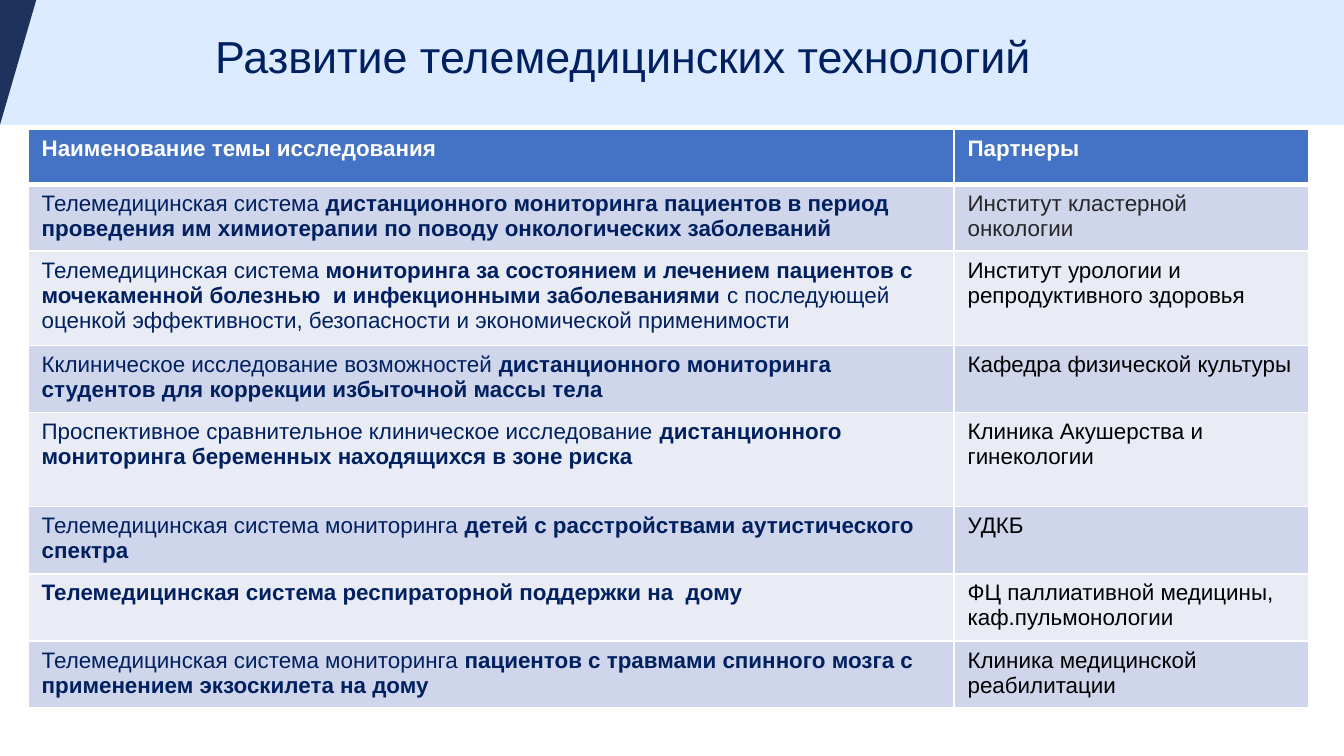
from lxml.etree import SubElement
from pptx import Presentation
from pptx.dml.color import RGBColor
from pptx.enum.shapes import MSO_SHAPE
from pptx.enum.text import MSO_ANCHOR, PP_ALIGN
from pptx.oxml.ns import qn
from pptx.util import Inches, Pt

NAVY, WHITE, BLACK = "002060", "FFFFFF", "000000"
FONT = "Arial"
TITLE = "Развитие телемедицинских технологий"
HEADERS = ("Наименование темы исследования", "Партнеры")
STUDIES = [
    ([("Телемедицинская система ", False),
      ("дистанционного мониторинга пациентов в период проведения им химиотерапии "
       "по поводу онкологических заболеваний", True)],
     "Институт кластерной онкологии", "262626"),
    ([("Телемедицинская система ", False),
      ("мониторинга за состоянием и лечением пациентов с мочекаменной болезнью  "
       "и инфекционными заболеваниями ", True),
      ("с последующей оценкой эффективности, безопасности и экономической "
       "применимости", False)],
     "Институт урологии и репродуктивного здоровья", BLACK),
    ([("Кклиническое исследование возможностей ", False),
      ("дистанционного мониторинга студентов для коррекции избыточной массы тела", True)],
     "Кафедра физической культуры", BLACK),
    ([("Проспективное сравнительное клиническое исследование ", False),
      ("дистанционного мониторинга беременных находящихся в зоне риска", True)],
     "Клиника Акушерства и гинекологии", BLACK),
    ([("Телемедицинская система мониторинга ", False),
      ("детей с расстройствами аутистического спектра", True)],
     "УДКБ", BLACK),
    ([("Телемедицинская система респираторной поддержки на  дому", True)],
     "ФЦ паллиативной медицины, каф.пульмонологии", BLACK),
    ([("Телемедицинская система мониторинга ", False),
      ("пациентов с травмами спинного мозга с применением экзоскилета на дому", True)],
     "Клиника медицинской реабилитации", BLACK),
]
COL_WIDTHS = (6.89, 2.64)
ROW_HEIGHTS = (0.41, 0.5, 0.7, 0.5, 0.7, 0.5, 0.5, 0.5)
HEADER_FILL, BAND_FILLS = "4472C4", ("CFD5EA", "E9EBF5")


def rgb(color):
    return RGBColor.from_string(color)


def paint(sp, color):
    sp.shadow.inherit = False
    sp.fill.solid()
    sp.fill.fore_color.rgb = rgb(color)
    sp.line.fill.background()


def add_run(p, text, size, color, bold=False):
    r = p.add_run()
    r.text = text
    r.font.name, r.font.size, r.font.bold = FONT, Pt(size), bold
    r.font.color.rgb = rgb(color)


def set_borders(cell, top, bottom):
    tc_pr = cell._tc.get_or_add_tcPr()
    for side, width in (("L", 1), ("R", 1), ("T", top), ("B", bottom)):
        ln = SubElement(tc_pr, qn(f"a:ln{side}"), w=str(Pt(width)))
        SubElement(SubElement(ln, qn("a:solidFill")), qn("a:srgbClr"), val=WHITE)


def fill_cell(cell, runs, color, fill, top=1, bottom=1):
    set_borders(cell, top, bottom)
    cell.fill.solid()
    cell.fill.fore_color.rgb = rgb(fill)
    for text, bold in runs:
        add_run(cell.text_frame.paragraphs[0], text, 12, color, bold)


prs = Presentation()
prs.slide_width, prs.slide_height = Inches(10), Inches(10 * 9 / 16)
s = prs.slides.add_slide(prs.slide_layouts[5])

band = s.shapes.add_shape(MSO_SHAPE.RECTANGLE, 0, 0, Inches(10), Inches(0.93))
paint(band, "DCEBFF")
corner = s.shapes.build_freeform(0, 0)
corner.add_line_segments([(Inches(0.27), 0), (0, Inches(0.93))], close=True)
paint(corner.convert_to_shape(), "1F325E")

frame = s.shapes.add_table(len(ROW_HEIGHTS), len(COL_WIDTHS), Inches(0.21), Inches(0.96),
                           Inches(sum(COL_WIDTHS)), Inches(sum(ROW_HEIGHTS)))
table = frame.table
for column, width in zip(table.columns, COL_WIDTHS):
    column.width = Inches(width)
for row, height in zip(table.rows, ROW_HEIGHTS):
    row.height = Inches(height)
for col, header in enumerate(HEADERS):
    fill_cell(table.cell(0, col), [(header, True)], WHITE, HEADER_FILL, bottom=3)
for i, (topic, partner, partner_color) in enumerate(STUDIES):
    fill, top = BAND_FILLS[i % 2], 1 if i else 3
    fill_cell(table.cell(i + 1, 0), topic, NAVY, fill, top)
    fill_cell(table.cell(i + 1, 1), [(partner, False)], partner_color, fill, top)

title = s.shapes.title
title.left, title.top, title.width, title.height = map(Inches, (0.69, 0.21, 7.89, 0.5))
tf = title.text_frame
tf.word_wrap = True
tf.vertical_anchor = MSO_ANCHOR.TOP
p = tf.paragraphs[0]
p.alignment, p.line_spacing = PP_ALIGN.CENTER, 0.9
add_run(p, TITLE, 24, NAVY)
s.shapes.element.append(title.element)

prs.save("out.pptx")
